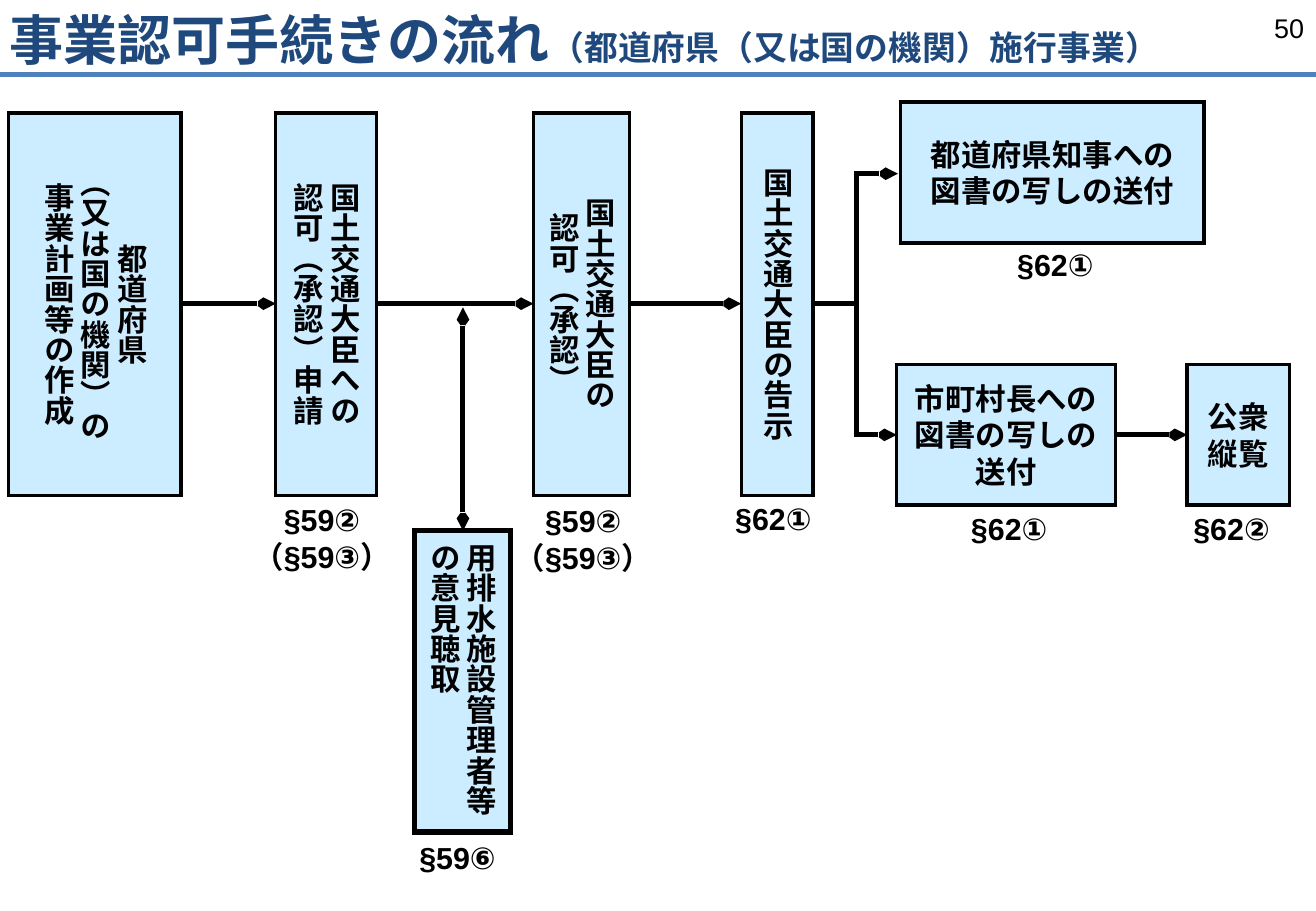
import pptx
import pptx.dml.color
import pptx.enum.shapes
import pptx.enum.text
import pptx.oxml
import pptx.oxml.ns
import pptx.util

PX = 9144  # 100 px to the inch
ALIGN = pptx.enum.text.PP_ALIGN
ANCHOR = pptx.enum.text.MSO_ANCHOR
BLACK, NAVY, BLUE, PALE = "000000", "1F497D", "4F81BD", "CCECFF"
SERIF, SANS = "Times New Roman", "Arial"


def px(*lengths):
    return [pptx.util.Emu(length * PX) for length in lengths]


def color(value):
    return pptx.dml.color.RGBColor.from_string(value)


def append_tag(parent, tag):
    """Append an empty drawing element, given as its name and attributes."""
    parent.append(pptx.oxml.parse_xml(f'<a:{tag} {pptx.oxml.ns.nsdecls("a")}/>'))


def style_outline(shape, ink, points):
    shape.line.color.rgb = color(ink)
    shape.line.width = pptx.util.Pt(points)
    outline = shape.element.spPr.find(pptx.oxml.ns.qn("a:ln"))
    append_tag(outline, 'miter lim="800000"')
    return outline


def write(para, text, size=18, font=SANS, ink=BLACK, bold=True, align=ALIGN.CENTER):
    para.alignment = align
    span = para.add_run()
    span.text = text
    span.font.size = pptx.util.Pt(size)
    span.font.name = font
    span.font.bold = bold
    span.font.color.rgb = color(ink)


def write_lines(box, lines, anchor=ANCHOR.MIDDLE, **style):
    frame = box.text_frame
    frame.word_wrap = True
    frame.vertical_anchor = anchor
    for index, line in enumerate(lines):
        para = frame.add_paragraph() if index else frame.paragraphs[0]
        write(para, line, **style)


def add_label(page, left, top, width, height, *lines, **style):
    box = page.shapes.add_textbox(*px(left, top, width, height))
    write_lines(box, lines, **style)


def add_step(page, left, top, width, height, *lines, vertical=False, border=2,
             align=ALIGN.CENTER):
    box = page.shapes.add_shape(
        pptx.enum.shapes.MSO_SHAPE.RECTANGLE, *px(left, top, width, height))
    box.shadow.inherit = False
    box.fill.solid()
    box.fill.fore_color.rgb = color(PALE)
    style_outline(box, BLACK, border)
    write_lines(box, lines, font=SERIF, align=align)
    if vertical:
        body = box.element.txBody.bodyPr
        body.set("vert", "eaVert")
        body.set("anchorCtr", "1" if align == ALIGN.CENTER else "0")


def add_line(page, x1, y1, x2, y2, ink=BLACK, ends=()):
    """Draw a line; ends names the arrowheads, headEnd before tailEnd."""
    line = page.shapes.add_connector(
        pptx.enum.shapes.MSO_CONNECTOR.STRAIGHT, *px(x1, y1, x2, y2))
    outline = style_outline(line, ink, 3)
    for end in ends:
        append_tag(outline, f'{end} type="arrow" w="sm" len="med"')
    append_tag(line.element.spPr, "effectLst")


def add_arrow(page, x1, y, x2):
    add_line(page, x1, y, x2, y, ends=["tailEnd"])


def add_header(page, left, top, width):
    title = page.shapes.title
    title.left, title.top, title.width, title.height = px(left - 2, top, width + 99, 64)
    frame = title.text_frame
    frame.auto_size = pptx.enum.text.MSO_AUTO_SIZE.NONE
    style = {"ink": NAVY, "align": ALIGN.LEFT}
    write_lines(title, ["事業認可手続きの流れ"], anchor=ANCHOR.TOP, size=32, **style)
    write(frame.paragraphs[0], "（都道府県（又は国の機関）施行事業）", size=20, **style)
    add_label(page, left + width - 253, top + 5, 253, 40, "50",
              anchor=ANCHOR.TOP, size=16, bold=False, align=ALIGN.RIGHT)
    add_line(page, left, top + 61, left + width, top + 61, ink=BLUE)


def add_main_flow(page, left, top, height):
    """Place the four tall steps in a row, with arrows between neighbours."""
    steps = [
        (0, 142, ["都道府県", "（又は国の機関）の", "事業計画等の作成"]),
        (220, 83, ["国土交通大臣への", "認可（承認）申請"]),
        (432, 79, ["国土交通大臣の", "認可（承認）"]),
        (603, 59, ["国土交通大臣の告示"]),
    ]
    for offset, width, lines in steps:
        add_step(page, left + offset, top, width, height, *lines, vertical=True)
    for (offset, width, _), (following, _, _) in zip(steps, steps[1:]):
        add_arrow(page, left + offset + width, top + 157, left + following)
    bottom = top + height
    add_label(page, left + 173, bottom - 2, 170, 74, "§59②", "（§59③）")
    add_label(page, left + 384, bottom - 5, 178, 81, "§59②", "（§59③）")
    add_label(page, left + 581, bottom + 1, 97, 36, "§62①")


def add_hearing(page, left, top, width, height):
    """Place the hearing step, its number, and the two-way arrow above it."""
    add_line(page, left + 40, top - 184, left + 40, top, ends=["headEnd", "tailEnd"])
    add_step(page, left, top, width, height, "用排水施設管理者等の意見聴取",
             vertical=True, border=3, align=ALIGN.LEFT)
    add_label(page, left - 13, top + height + 3, 97, 36, "§59⑥")


def add_delivery(page, left, top):
    """Place the fork from the notice to the governor and the mayor."""
    fork, upper, lower = left + 36, top + 59, top + 274
    add_line(page, left, top + 166, fork, top + 166)
    add_line(page, fork, upper - 2, fork, lower + 1)
    add_arrow(page, fork - 1, upper, left + 70)
    add_arrow(page, fork - 2, lower, left + 69)
    add_arrow(page, left + 249, lower, left + 308)
    add_step(page, left + 72, top, 250, 116, "都道府県知事への", "図書の写しの送付")
    add_step(page, left + 69, top + 216, 180, 116, "市町村長への", "図書の写しの", "送付")
    add_step(page, left + 308, top + 216, 84, 116, "公衆縦覧")
    labels = [(151, 116, "§62①"), (113, 333, "§62①"), (296, 333, "§62②")]
    for across, down, text in labels:
        add_label(page, left + across, top + down, 97, 36, text)


def main():
    deck = pptx.Presentation()
    deck.slide_width, deck.slide_height = px(1083, 750)
    page = deck.slides.add_slide(deck.slide_layouts.get_by_name("Title Only"))
    add_header(page, 0, 0, 1083)
    add_main_flow(page, 7, 93, 315)
    add_hearing(page, 341, 437, 79, 248)
    add_delivery(page, 669, 84)
    deck.save("out.pptx")


if __name__ == "__main__":
    main()
